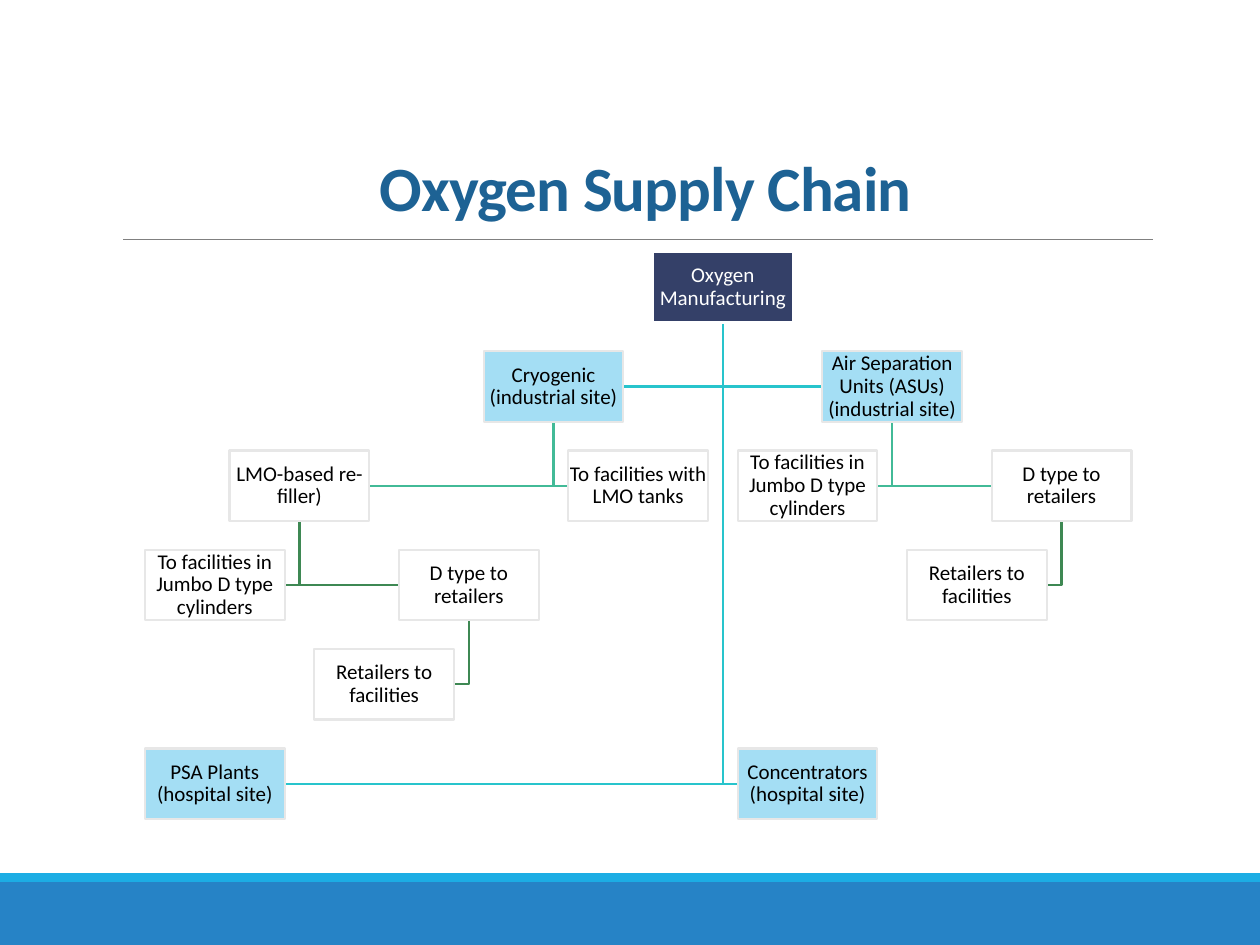
from dataclasses import dataclass
from lxml import etree
from pptx import Presentation
from pptx.dml.color import RGBColor
from pptx.enum.shapes import MSO_CONNECTOR, MSO_SHAPE
from pptx.enum.text import MSO_ANCHOR, MSO_AUTO_SIZE, PP_ALIGN
from pptx.oxml.ns import qn
from pptx.util import Inches, Pt


@dataclass(frozen=True)
class Theme:
    font: str = "Calibri"
    title_size: int = 36
    box_size: int = 12
    title: str = "1D6294"
    rule: str = "808080"
    footer: str = "2683C6"
    accent: str = "1CADE4"
    root: str = "344068"
    source: str = "A4DEF4"
    border: str = "E7E7E7"
    white: str = "FFFFFF"
    black: str = "000000"
    links: tuple = ("28C4CC", "42BA97", "3E8853", "3E8853")  # by parent depth


theme = Theme()
rgb = RGBColor.from_string


def add_rect(x, y, w, h, fill=None, line=None):
    sp = s.shapes.add_shape(MSO_SHAPE.RECTANGLE, Inches(x), Inches(y), Inches(w), Inches(h))
    sp.shadow.inherit = False
    if fill:
        sp.fill.solid()
        sp.fill.fore_color.rgb = rgb(fill)
    else:
        sp.fill.background()
    if line:
        sp.line.color.rgb = rgb(line)
        sp.line.width = Pt(1.25)
    else:
        sp.line.fill.background()
    return sp


def format_run(r, size, color, bold=False):
    r.font.name = theme.font
    r.font.size = Pt(size)
    r.font.bold = bold
    r.font.color.rgb = rgb(color)


prs = Presentation()
prs.slide_width, prs.slide_height = Inches(10), Inches(7.5)
s = prs.slides.add_slide(prs.slide_layouts[5])

# Footer bands and title rule
add_rect(0, 7, 10, 0.5, theme.footer)
add_rect(0, 6.93, 10, 0.07, theme.accent)
rule = s.shapes.add_connector(MSO_CONNECTOR.STRAIGHT, Inches(0.98), Inches(1.9), Inches(9.15), Inches(1.9))
rule.line.color.rgb = rgb(theme.rule)
rule.line.width = Pt(0.5)
etree.SubElement(rule._element.spPr, qn("a:effectLst"))

# Title
title = s.shapes.title
title.left, title.top, title.width, title.height = Inches(0.96), Inches(0.98), Inches(8.08), Inches(0.85)
tf = title.text_frame
tf.text = "Oxygen Supply Chain"
tf.auto_size = MSO_AUTO_SIZE.NONE
tf.vertical_anchor = MSO_ANCHOR.BOTTOM
p = tf.paragraphs[0]
p.alignment = PP_ALIGN.CENTER
p.line_spacing = Pt(30)
p.space_after = Pt(13.5)
pPr = p._p.get_or_add_pPr()
pPr.set("marL", str(Inches(0.07)))
pPr.set("indent", str(Inches(-0.07)))
etree.SubElement(pPr, qn("a:buChar")).set("char", " ")
format_run(p.runs[0], theme.title_size, theme.title, bold=True)
p.runs[0]._r.get_or_add_rPr().set("spc", "-50")

# Supply tree: key, parent, column, row, depth, text
LEFT, TOP, BOX_W, BOX_H = 1.15, 2, 1.11, 0.56
COL_STEP = (7.87 - LEFT) / 10
ROW_STEP = (5.94 - TOP) / 5
nodes = [
    ("root", None, 6, 0, 0, "Oxygen Manufacturing"),
    ("cryo", "root", 4, 1, 1, "Cryogenic (industrial site)"),
    ("refill", "cryo", 1, 2, 2, "LMO-based re-filler)"),
    ("refill_jumbo", "refill", 0, 3, 3, "To facilities in Jumbo D type cylinders"),
    ("refill_d", "refill", 3, 3, 3, "D type to retailers"),
    ("refill_retail", "refill_d", 2, 4, 4, "Retailers to facilities"),
    ("tanks", "cryo", 5, 2, 2, "To facilities with LMO tanks"),
    ("asu", "root", 8, 1, 1, "Air Separation Units (ASUs) (industrial site)"),
    ("asu_jumbo", "asu", 7, 2, 2, "To facilities in Jumbo D type cylinders"),
    ("asu_d", "asu", 10, 2, 2, "D type to retailers"),
    ("asu_retail", "asu_d", 9, 3, 3, "Retailers to facilities"),
    ("psa", "root", 0, 5, 1, "PSA Plants (hospital site)"),
    ("conc", "root", 7, 5, 1, "Concentrators (hospital site)"),
]
spots = {key: (LEFT + col * COL_STEP, TOP + row * ROW_STEP) for key, _, col, row, _, _ in nodes}

# Elbow links: down from the parent, then across to the child's near side
for key, parent, _, _, depth, _ in nodes:
    if parent is None:
        continue
    (px, py), (x, y) = spots[parent], spots[key]
    start_x, mid_y = Inches(px + BOX_W / 2), Inches(y + BOX_H / 2)
    end_x = Inches(x if x > px else x + BOX_W)
    path = s.shapes.build_freeform(start_x, Inches(py + BOX_H))
    path.add_line_segments([(start_x, mid_y), (end_x, mid_y)], close=False)
    link = path.convert_to_shape()
    link.shadow.inherit = False
    link.fill.background()
    link.line.color.rgb = rgb(theme.links[depth - 1])
    link.line.width = Pt(1.25)

# Boxes: the root is dark, its children are blue, the rest are open
for key, _, _, _, depth, text in nodes:
    fill = (theme.root, theme.source)[depth] if depth < 2 else None
    border = theme.border if depth else theme.white
    sp = add_rect(*spots[key], BOX_W, BOX_H, fill, border)
    tf = sp.text_frame
    tf.text = text
    tf.word_wrap = True
    tf.vertical_anchor = MSO_ANCHOR.MIDDLE
    tf.margin_left = tf.margin_right = tf.margin_top = tf.margin_bottom = Inches(0.01)
    p = tf.paragraphs[0]
    p.alignment = PP_ALIGN.CENTER
    p.line_spacing = 0.9
    format_run(p.runs[0], theme.box_size, theme.black if depth else theme.white)

prs.save("out.pptx")
